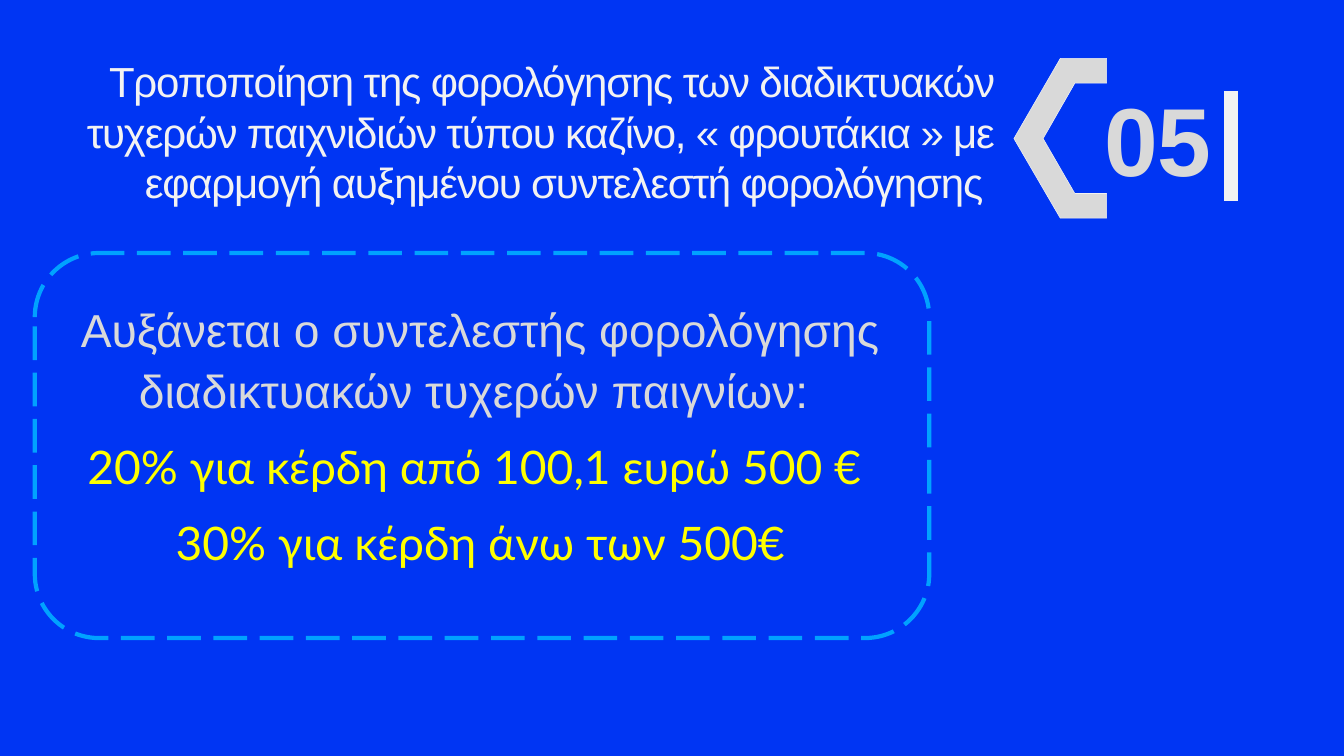
from dataclasses import dataclass
from typing import Any

from lxml.etree import SubElement
from pptx import Presentation
from pptx.dml.color import RGBColor as RGB
from pptx.enum.dml import MSO_LINE as Dash
from pptx.enum.shapes import MSO_CONNECTOR as Conn, MSO_SHAPE as Shape
from pptx.enum.text import MSO_ANCHOR as Anchor, MSO_AUTO_SIZE as AutoSize, PP_ALIGN as Align
from pptx.oxml.ns import qn
from pptx.util import Inches, Pt


@dataclass(frozen=True)
class Theme:
    """Colours, fonts and type sizes of the slide."""
    back: RGB = RGB(0x00, 0x35, 0xF3)
    frame: RGB = RGB(0x00, 0xA2, 0xFF)
    light: RGB = RGB(0xF2, 0xF2, 0xF2)
    grey: RGB = RGB(0xD9, 0xD9, 0xD9)
    accent: RGB = RGB(0xFF, 0xFF, 0x00)
    main_font: str = "Arial"
    rate_font: str = "Lato"
    title_size: int = 60
    body_size: int = 66
    number_size: int = 138


@dataclass(frozen=True)
class Para:
    """One paragraph with its type and spacing."""
    text: str
    size: int
    color: RGB
    font: str
    align: Align = Align.CENTER
    line: float = 1.0
    before: int = 0
    bold: bool = False
    tracking: int = 0


T = Theme()
TITLE = [Para("Τροποποίηση της φορολόγησης των διαδικτυακών τυχερών παιχνιδιών τύπου καζίνο, "
              "« φρουτάκια » με εφαρμογή αυξημένου συντελεστή φορολόγησης ",
              T.title_size, T.light, T.main_font, Align.RIGHT, tracking=-170)]
BODY = [
    Para("Αυξάνεται ο συντελεστής φορολόγησης διαδικτυακών τυχερών παιγνίων: ",
         T.body_size, T.grey, T.main_font, line=1.1),
    *(Para(text, T.body_size, T.accent, T.rate_font, line=0.8, before=45)
      for text in ("20% για κέρδη από 100,1 ευρώ 500 € ", "30% για κέρδη άνω των 500€")),
]
NUMBER = [Para("05", T.number_size, T.grey, T.main_font, Align.LEFT, 0.9, bold=True)]
BRACKET = [(21.04, 4.33), (21.96, 4.33), (21.96, 3.84), (21.33, 3.84), (20.7, 2.75),
           (21.33, 1.65), (21.96, 1.65), (21.96, 1.16), (21.04, 1.16), (20.12, 2.75)]


def apply(obj: Any, values: dict[str, Any]) -> None:
    """Set each named attribute on an object."""
    for name, value in values.items():
        setattr(obj, name, value)


def place(sp: Any, left: float, top: float, width: float, height: float) -> None:
    """Position a shape in inches."""
    apply(sp, {"left": Inches(left), "top": Inches(top),
               "width": Inches(width), "height": Inches(height)})


def write(sp: Any, paras: list[Para], inset_x: float, inset_y: float) -> None:
    """Fill a text shape with formatted paragraphs."""
    tf = sp.text_frame
    apply(tf, {"word_wrap": True, "auto_size": AutoSize.NONE, "vertical_anchor": Anchor.TOP,
               "margin_left": Inches(inset_x), "margin_right": Inches(inset_x),
               "margin_top": Inches(inset_y), "margin_bottom": Inches(inset_y)})
    for i, para in enumerate(paras):
        p = tf.add_paragraph() if i else tf.paragraphs[0]
        apply(p, {"alignment": para.align, "line_spacing": para.line,
                  "space_before": Pt(para.before)})
        r = p.add_run()
        r.text = para.text
        apply(r.font, {"size": Pt(para.size), "name": para.font, "bold": para.bold})
        r.font.color.rgb = para.color
        if para.tracking:
            r.font._element.set("spc", str(para.tracking))


def outline(sp: Any, color: RGB, width: float) -> None:
    """Give a shape or connector a solid line colour and width."""
    sp.line.color.rgb = color
    sp.line.width = Pt(width)


def draw_frame(s: Any) -> None:
    """Draw the dashed rounded frame."""
    sp = s.shapes.add_shape(Shape.ROUNDED_RECTANGLE, 0, 0, 0, 0)
    place(sp, 0.69, 5.02, 17.75, 7.64)
    sp.shadow.inherit = False
    sp.fill.background()
    outline(sp, T.frame, 6)
    sp.line.dash_style = Dash.LONG_DASH


def draw_bracket(s: Any) -> None:
    """Draw the angular bracket left of the number."""
    points = [(Inches(x), Inches(y)) for x, y in BRACKET]
    builder = s.shapes.build_freeform(*points[0])
    builder.add_line_segments(points[1:], close=True)
    sp = builder.convert_to_shape()
    sp.shadow.inherit = False
    sp.fill.solid()
    sp.fill.fore_color.rgb = T.grey
    outline(sp, T.light, 0.75)


def draw_bar(s: Any) -> None:
    """Draw the thick bar right of the number."""
    x = Inches(24.42)
    bar = s.shapes.add_connector(Conn.STRAIGHT, x, Inches(1.8), x, Inches(3.99))
    outline(bar, T.light, 20)
    SubElement(bar._element.spPr, qn("a:effectLst"))


def main() -> None:
    """Build and save the slide."""
    prs = Presentation()
    apply(prs, {"slide_width": Inches(26.67), "slide_height": Inches(15)})
    s = prs.slides.add_slide(prs.slide_layouts[5])
    s.background.fill.solid()
    s.background.fill.fore_color.rgb = T.back
    draw_frame(s)
    title = s.shapes.title
    place(title, 0.69, 1.05, 19.09, 2.58)
    write(title, TITLE, 0.06, 0.06)
    body = s.shapes.add_textbox(0, 0, 0, 0)
    place(body, 0.93, 5.8, 17.2, 5.95)
    write(body, BODY, 0.06, 0.06)
    draw_bracket(s)
    number = s.shapes.add_textbox(0, 0, 0, 0)
    place(number, 21.81, 1.8, 2.6, 1.9)
    write(number, NUMBER, 0.1, 0.05)
    draw_bar(s)
    prs.save("out.pptx")


if __name__ == "__main__":
    main()
